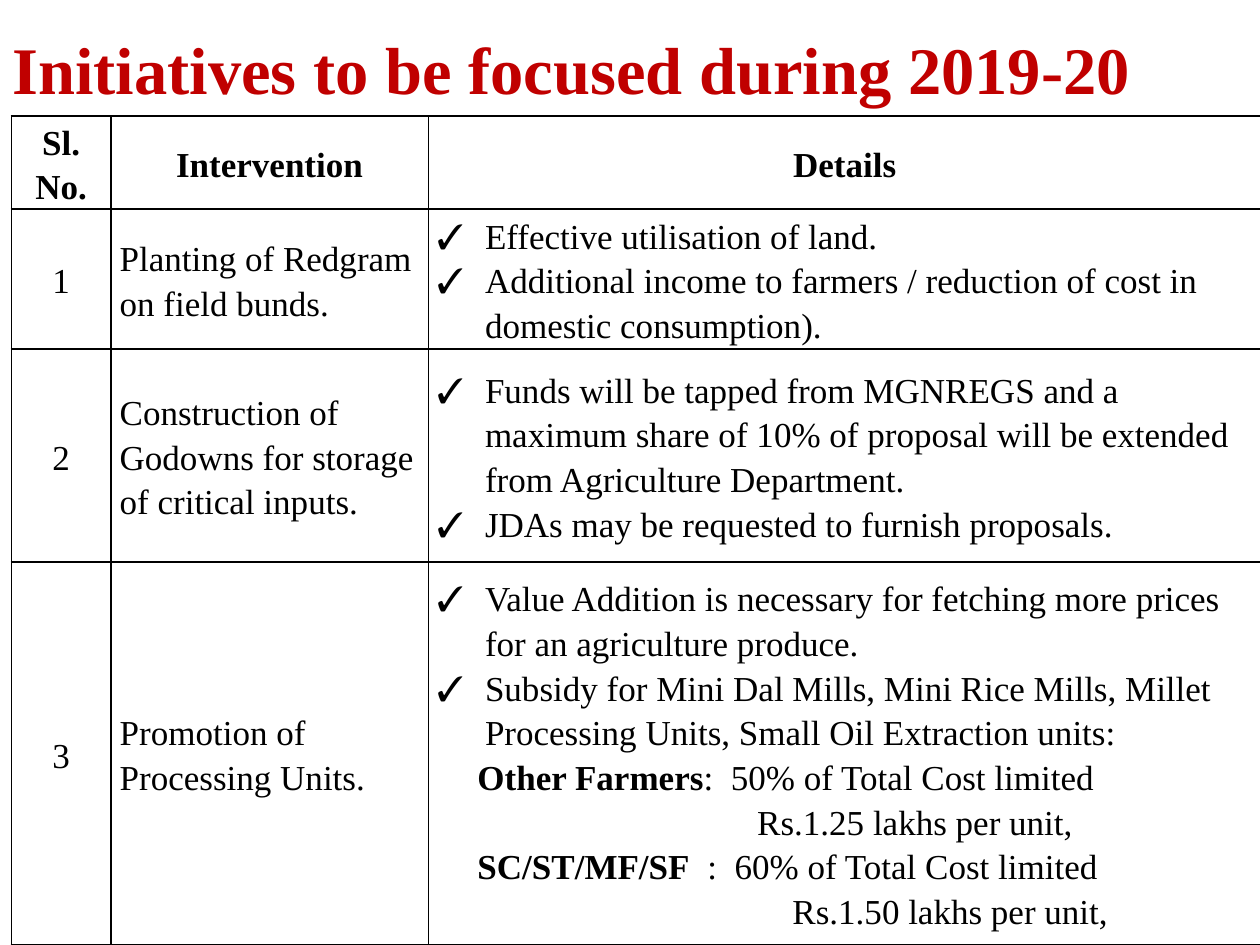
from lxml.etree import SubElement
from pptx import Presentation
from pptx.dml.color import RGBColor
from pptx.enum.text import MSO_ANCHOR, PP_ALIGN
from pptx.oxml.ns import qn
from pptx.util import Inches, Pt

COLORS = {"title": "C00000", "text": "000000", "border": "000000"}
FONT = "Times New Roman"
BULLET = "✓"
LINE_PITCH = Pt(25.5)

HEADINGS = ["Sl. No.", "Intervention", "Details"]
COLUMN_WIDTHS = [0.79, 2.52, 6.61]
ROW_HEIGHTS = [0.74, 1.11, 1.69, 3.04]

# Each detail is (bold lead, text, left indent); no indent means a bulleted line.
INITIATIVES = [
    ("Planting of Redgram on field bunds.", [
        ("", "Effective utilisation of land.", None),
        ("", "Additional income to farmers / reduction of cost in "
             "domestic consumption).", None),
    ]),
    ("Construction of Godowns for storage of critical inputs.", [
        ("", "Funds will be tapped from MGNREGS and a maximum share of 10% of "
             "proposal will be extended from Agriculture Department.", None),
        ("", "JDAs may be requested to furnish proposals.", None),
    ]),
    ("Promotion of Processing Units.", [
        ("", "Value Addition is necessary for fetching more prices for an "
             "agriculture produce.", None),
        ("", "Subsidy for Mini Dal Mills, Mini Rice Mills, Millet Processing "
             "Units, Small Oil Extraction units:", None),
        ("Other Farmers", ":  50% of Total Cost limited", 0.32),
        ("", "Rs.1.25 lakhs per unit,", 2.54),
        ("SC/ST/MF/SF", "  :  60% of Total Cost limited", 0.32),
        ("", "Rs.1.50 lakhs per unit,", 2.82),
    ]),
]


def add_span(para, text, size=20, bold=False, color="text"):
    span = para.add_run()
    span.text = text
    span.font.name = FONT
    span.font.size = Pt(size)
    span.font.bold = bold
    span.font.color.rgb = RGBColor.from_string(COLORS[color])


def indent(para, left, bulleted=False):
    """Indent a paragraph; a bullet hangs in the indent."""
    properties = para._p.get_or_add_pPr()
    properties.set("marL", str(Inches(left)))
    properties.set("indent", str(Inches(-left if bulleted else 0)))
    if bulleted:
        SubElement(properties, qn("a:buFont"), typeface=FONT)
        SubElement(properties, qn("a:buChar"), char=BULLET)


def add_borders(cell):
    """Line all four sides; borders must come before the fill in the XML."""
    properties = cell._tc.get_or_add_tcPr()
    for side in ("a:lnL", "a:lnR", "a:lnT", "a:lnB"):
        line = SubElement(properties, qn(side), w=str(Pt(1)))
        fill = SubElement(line, qn("a:solidFill"))
        SubElement(fill, qn("a:srgbClr"), val=COLORS["border"])


class SlideBuilder:
    def __init__(self, deck):
        self.slide = deck.slides.add_slide(deck.slide_layouts[6])

    def title(self, text, left, top, width, height):
        box = self.slide.shapes.add_textbox(
            Inches(left), Inches(top), Inches(width), Inches(height))
        frame = box.text_frame
        frame.word_wrap = True
        frame.vertical_anchor = MSO_ANCHOR.MIDDLE
        add_span(frame.paragraphs[0], text, size=38, bold=True, color="title")

    def table(self, left, top, widths, heights):
        table = self.slide.shapes.add_table(
            len(heights), len(widths), Inches(left), Inches(top),
            Inches(sum(widths)), Inches(sum(heights))).table
        for column, width in zip(table.columns, widths):
            column.width = Inches(width)
        for row, height in zip(table.rows, heights):
            row.height = Inches(height)
        return table

    def cell(self, cell, lines, align=PP_ALIGN.LEFT, bold=False):
        """Fill a cell with (bold lead, text, left indent) lines."""
        cell.margin_left = cell.margin_right = Inches(0.07)
        cell.margin_top = cell.margin_bottom = 0
        cell.vertical_anchor = MSO_ANCHOR.MIDDLE
        add_borders(cell)
        cell.fill.background()
        frame = cell.text_frame
        for index, (lead, text, left) in enumerate(lines):
            para = frame.add_paragraph() if index else frame.paragraphs[0]
            para.alignment = align
            para.line_spacing = LINE_PITCH
            if left is None:
                indent(para, 0.38, bulleted=True)
            else:
                indent(para, left)
            if lead:
                add_span(para, lead, bold=True)
            add_span(para, text, bold=bold)


def main():
    deck = Presentation()
    deck.slide_width, deck.slide_height = Inches(10), Inches(7.5)
    builder = SlideBuilder(deck)
    builder.title("Initiatives to be focused during 2019-20", 0, 0, 10, 1.08)

    table = builder.table(0.09, 0.92, COLUMN_WIDTHS, ROW_HEIGHTS)
    for column, heading in enumerate(HEADINGS):
        builder.cell(table.cell(0, column), [("", heading, 0)],
                     PP_ALIGN.CENTER, bold=True)
    for number, (intervention, details) in enumerate(INITIATIVES, start=1):
        builder.cell(table.cell(number, 0), [("", str(number), 0)],
                     PP_ALIGN.CENTER)
        builder.cell(table.cell(number, 1), [("", intervention, 0)])
        builder.cell(table.cell(number, 2), details)
    deck.save("out.pptx")


if __name__ == "__main__":
    main()
